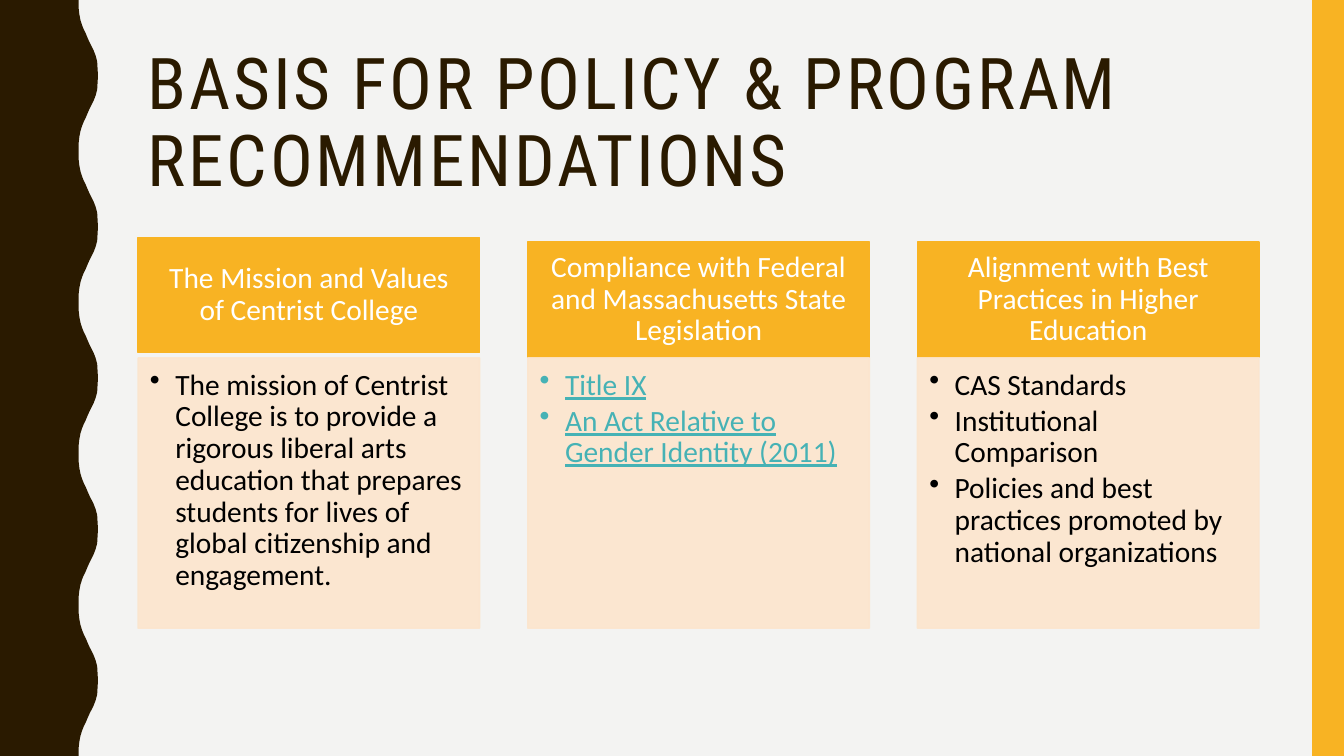
from lxml.etree import SubElement
from pptx import Presentation
from pptx.dml.color import RGBColor
from pptx.enum.shapes import MSO_SHAPE
from pptx.enum.text import MSO_ANCHOR, PP_ALIGN
from pptx.oxml.ns import qn
from pptx.util import Cm, Pt

COLORS = {
    "background": "F3F3F2",
    "brown": "2A1A00",
    "amber": "F8B323",
    "peach": "FCE5CD",
    "white": "FFFFFF",
    "black": "000000",
    "link": "46B2B5",
}


def paint(shape, color, outlined=False):
    shape.shadow.inherit = False
    shape.fill.solid()
    shape.fill.fore_color.rgb = RGBColor.from_string(COLORS[color])
    if outlined:
        shape.line.width = Pt(1)
        shape.line.color.rgb = RGBColor.from_string(COLORS[color])
    else:
        shape.line.fill.background()


def write(tf, lines, size, font, color, insets, anchor, align):
    tf.word_wrap = True
    tf.vertical_anchor = anchor
    tf.margin_left, tf.margin_top, tf.margin_right, tf.margin_bottom = map(Cm, insets)
    for i, line in enumerate(lines):
        p = tf.paragraphs[0] if i == 0 else tf.add_paragraph()
        p.text = line
        p.alignment = align
        p.line_spacing = 0.9
        p.font.size = Pt(size)
        p.font.name = font
        p.font.color.rgb = RGBColor.from_string(COLORS[color])


prs = Presentation()
prs.slide_width, prs.slide_height = Cm(33.87), Cm(19.05)
s = prs.slides.add_slide(prs.slide_layouts[6])
s.background.fill.solid()
s.background.fill.fore_color.rgb = RGBColor.from_string(COLORS["background"])

WAVE_HEIGHT = 3.81
half_wave = [
    (1.98, 0), (1.98, 0.18), (2, 0.36), (2.03, 0.51), (2.07, 0.64),
    (2.11, 0.74), (2.16, 0.84), (2.21, 0.96), (2.26, 1.07), (2.31, 1.17),
    (2.36, 1.27), (2.41, 1.4), (2.45, 1.55), (2.46, 1.73), (2.47, 1.9),
]
wave = half_wave + [(x, WAVE_HEIGHT - y) for x, y in reversed(half_wave)]
edge = [(Cm(x), Cm(n * WAVE_HEIGHT + y)) for n in range(5) for x, y in wave]
builder = s.shapes.build_freeform(0, 0)
builder.add_line_segments(edge + [(0, prs.slide_height)], close=True)
paint(builder.convert_to_shape(), "brown")

bar = s.shapes.add_shape(MSO_SHAPE.RECTANGLE, Cm(33.07), 0, Cm(0.8), prs.slide_height)
paint(bar, "amber")

title = s.shapes.add_textbox(Cm(3.48), Cm(1.07), Cm(28.27), Cm(4.14))
write(title.text_frame, ["BASIS FOR POLICY & PROGRAM RECOMMENDATIONS"], 51,
      "Roboto Condensed", "brown", (0.25, 0.13, 0.25, 0.13),
      MSO_ANCHOR.MIDDLE, PP_ALIGN.LEFT)
for r in title.text_frame.paragraphs[0].runs:
    r.font._element.set("spc", "200")

columns = [
    ("The Mission and Values of Centrist College", 5.99, "black", [
        "The mission of Centrist College is to provide a rigorous liberal arts "
        "education that prepares students for lives of global citizenship and "
        "engagement.",
    ]),
    ("Compliance with Federal and Massachusetts State Legislation", 6.1, "link", [
        "Title IX",
        "An Act Relative to Gender Identity (2011)",
    ]),
    ("Alignment with Best Practices in Higher Education", 6.1, "black", [
        "CAS Standards",
        "Institutional Comparison",
        "Policies and best practices promoted by national organizations",
    ]),
]
for i, (heading, top, color, points) in enumerate(columns):
    left = Cm(3.48 + i * 9.82)
    header = s.shapes.add_shape(MSO_SHAPE.RECTANGLE, left, Cm(top), Cm(8.61), Cm(2.9))
    paint(header, "amber", outlined=True)
    write(header.text_frame, [heading], 21, "Calibri", "white",
          (0.41, 0.23, 0.41, 0.23), MSO_ANCHOR.MIDDLE, PP_ALIGN.CENTER)

    body = s.shapes.add_shape(MSO_SHAPE.RECTANGLE, left, Cm(9.02), Cm(8.61), Cm(6.81))
    paint(body, "peach", outlined=True)
    for clr in body._element.spPr.iter(qn("a:srgbClr")):
        SubElement(clr, qn("a:alpha"), val="90000")
    write(body.text_frame, points, 21, "Calibri", color,
          (0.3, 0.3, 0.41, 0.46), MSO_ANCHOR.TOP, PP_ALIGN.LEFT)
    for p in body.text_frame.paragraphs:
        p.space_after = Pt(3)
        if color == "link":
            p.font.underline = True
        pPr = p._p.get_or_add_pPr()
        pPr.set("marL", str(Cm(0.64)))
        pPr.set("indent", str(Cm(-0.64)))
        bullet = pPr.makeelement(qn("a:buChar"), {"char": "•"})
        pPr.insert_element_before(bullet, "a:tabLst", "a:defRPr", "a:extLst")

prs.save("out.pptx")
